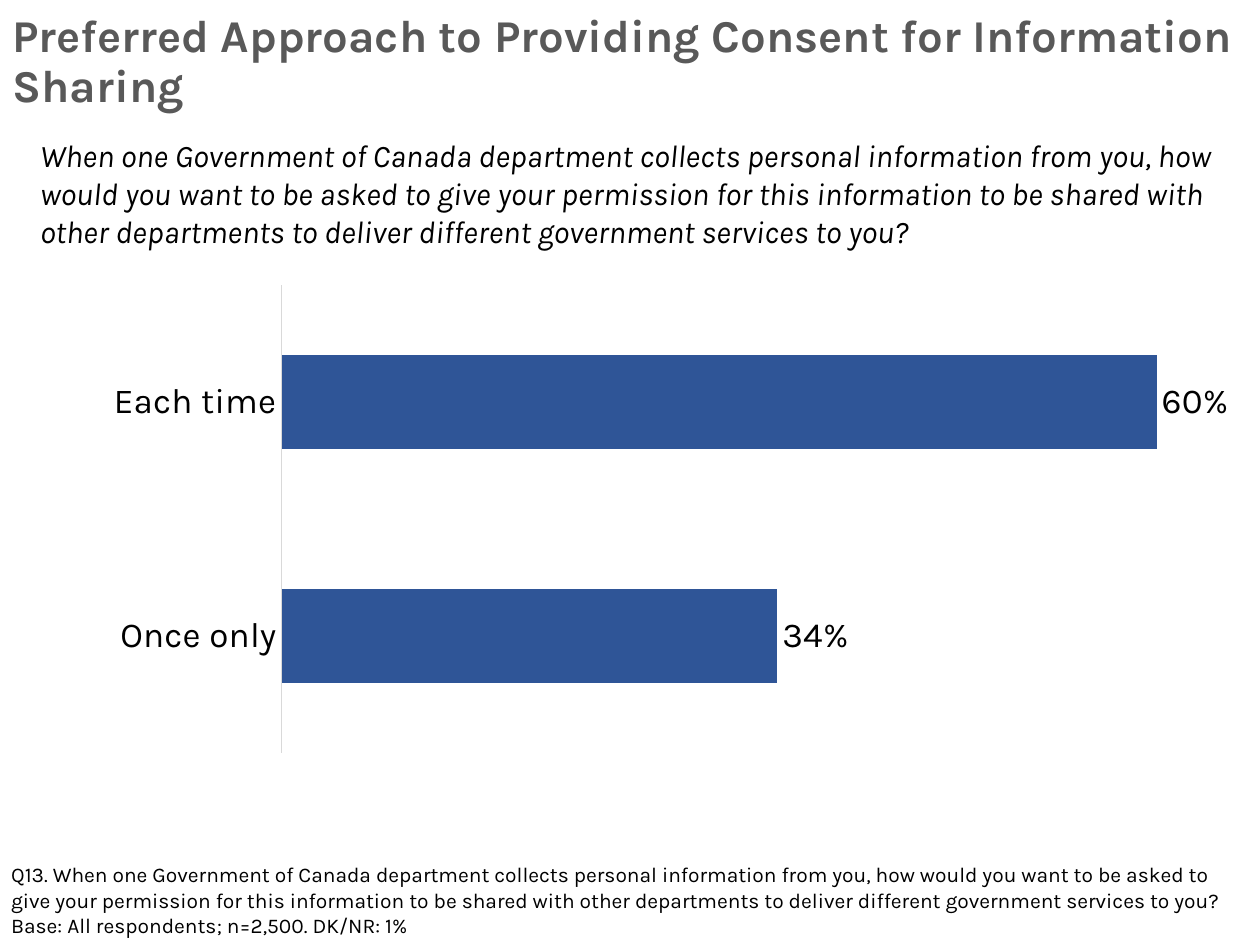
from lxml import etree
from pptx import Presentation
from pptx import util as u
from pptx.chart.data import CategoryChartData
from pptx.dml.color import RGBColor
from pptx.enum import chart as ch
from pptx.enum import text
from pptx.oxml.ns import qn

FONT = "Karla"
QUESTION = (
    "When one Government of Canada department collects personal information from you, "
    "how would you want to be asked to give your permission for this information to be "
    "shared with other departments to deliver different government services to you?"
)


def color(value):
    return RGBColor.from_string(value)


def style_font(font, size, value="000000", bold=False, italic=False):
    font.name = FONT
    font.size = u.Pt(size)
    font.color.rgb = color(value)
    font.bold = bold
    font.italic = italic


def add_text(slide, box, lines, size, spacing=None, **style):
    frame = slide.shapes.add_textbox(*map(u.Pt, box)).text_frame
    frame.word_wrap = True
    frame.vertical_anchor = text.MSO_ANCHOR.TOP
    frame.text = "\n".join(lines)
    for paragraph in frame.paragraphs:
        paragraph.line_spacing = spacing
        for run in paragraph.runs:
            style_font(run.font, size, **style)


def set_inner_plot(chart, x, y, w, h):
    plot_area = chart.plots[0]._element.getparent()
    for old in plot_area.findall(qn("c:layout")):
        plot_area.remove(old)
    layout = etree.Element(qn("c:layout"))
    manual = etree.SubElement(layout, qn("c:manualLayout"))
    settings = [("layoutTarget", "inner"), ("xMode", "edge"), ("yMode", "edge"),
                ("x", x), ("y", y), ("w", w), ("h", h)]
    for tag, value in settings:
        etree.SubElement(manual, qn(f"c:{tag}")).set("val", str(value))
    plot_area.insert(0, layout)


def add_consent_chart(slide, box, answers):
    data = CategoryChartData(number_format="0%")
    data.categories = list(answers)
    data.add_series("Series 1", list(answers.values()))
    chart = slide.shapes.add_chart(
        ch.XL_CHART_TYPE.BAR_CLUSTERED, *map(u.Pt, box), data).chart
    chart.has_legend = False
    chart.has_title = False
    style_font(chart.font, 20)

    category = chart.category_axis
    category.reverse_order = True
    category.major_tick_mark = ch.XL_TICK_MARK.NONE
    category.format.line.color.rgb = color("D9D9D9")
    category.format.line.width = u.Pt(0.75)
    style_font(category.tick_labels.font, 20)

    percent = chart.value_axis
    percent.minimum_scale = 0
    percent.maximum_scale = 0.7
    percent.has_major_gridlines = False
    percent.visible = False

    bars = chart.plots[0]
    bars.gap_width = 150
    bars.vary_by_categories = False
    fill = bars.series[0].format.fill
    fill.solid()
    fill.fore_color.rgb = color("2F5597")

    bars.has_data_labels = True
    labels = bars.data_labels
    labels.show_value = True
    labels.number_format = "0%"
    labels.number_format_is_linked = False
    labels.position = ch.XL_LABEL_POSITION.OUTSIDE_END
    style_font(labels.font, 20)
    set_inner_plot(chart, 0.194, 0.105, 0.78, 0.734)


def main():
    deck = Presentation()
    deck.slide_width, deck.slide_height = u.Pt(720), u.Pt(540)
    slide = deck.slides.add_slide(deck.slide_layouts[6])

    add_text(slide, (-0.7, 489, 720, 51),
             ["Q13. " + QUESTION, "Base: All respondents; n=2,500. DK/NR: 1%"], 12)
    add_consent_chart(slide, (15.8, 124.5, 748, 364.5),
                      {"Each time": 0.6, "Once only": 0.34})
    add_text(slide, (15.8, 74.2, 714.2, 72.7), [QUESTION], 18, italic=True)
    add_text(slide, (0, 4.3, 720, 38.2),
             ["Preferred Approach to Providing Consent for Information Sharing"],
             26, spacing=0.9, value="595959", bold=True)

    deck.save("out.pptx")


if __name__ == "__main__":
    main()
